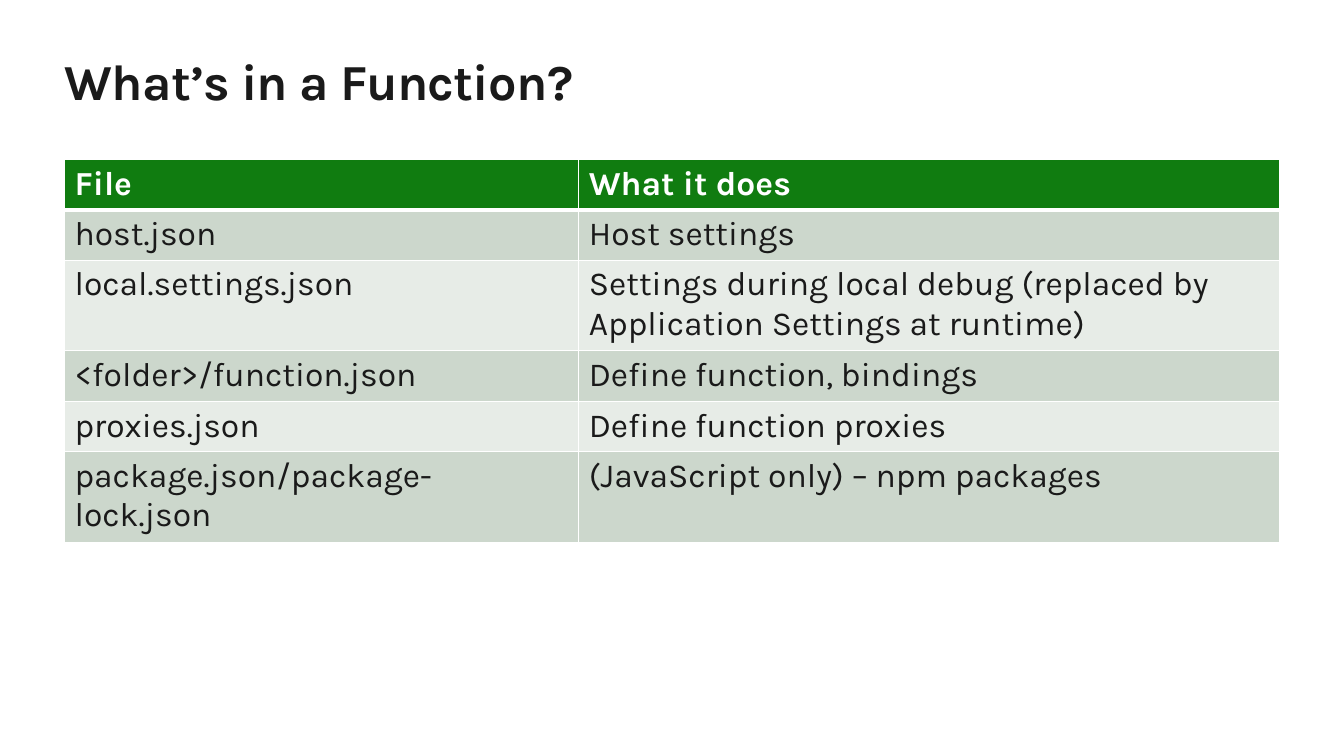
import pptx
import pptx.dml.color
import pptx.enum.text
import pptx.util
from lxml import etree
from pptx.oxml import ns

RGBColor = pptx.dml.color.RGBColor
Inches = pptx.util.Inches
Pt = pptx.util.Pt

INK = RGBColor(0x1A, 0x1A, 0x1A)
WHITE = RGBColor(0xFF, 0xFF, 0xFF)
GREEN = RGBColor(0x10, 0x7C, 0x10)
BANDS = (RGBColor(0xCC, 0xD7, 0xCC), RGBColor(0xE7, 0xEC, 0xE7))

LEFT = 0.64
COLUMN_WIDTHS = (5.1, 6.95)
ROW_HEIGHT = 0.41

FILES = [
    ("File", "What it does"),
    ("host.json", "Host settings"),
    ("local.settings.json",
     "Settings during local debug (replaced by Application Settings at runtime)"),
    ("<folder>/function.json", "Define function, bindings"),
    ("proxies.json", "Define function proxies"),
    ("package.json/package-lock.json", "(JavaScript only) – npm packages"),
]


class FunctionSlide:
    font_name = "Karla"

    def __init__(self, presentation):
        self.slide = presentation.slides.add_slide(presentation.slide_layouts[6])

    def add_text(self, frame, text, size, color, bold):
        run = frame.paragraphs[0].add_run()
        run.text = text
        font_format = {"name": self.font_name, "size": Pt(size), "bold": bold}
        for attribute, value in font_format.items():
            setattr(run.font, attribute, value)
        run.font.color.rgb = color
        return run

    def title(self, text, top, width, height):
        heading = self.slide.shapes.add_textbox(
            Inches(LEFT), Inches(top), Inches(width), Inches(height))
        frame_format = {
            "margin_left": 0, "margin_top": 0, "margin_right": 0, "margin_bottom": 0,
            "word_wrap": True,
            "auto_size": pptx.enum.text.MSO_AUTO_SIZE.SHAPE_TO_FIT_TEXT,
        }
        for attribute, value in frame_format.items():
            setattr(heading.text_frame, attribute, value)
        run = self.add_text(heading.text_frame, text, 36, INK, True)
        run._r.get_or_add_rPr().set("spc", "-50")

    def cell_borders(self, cell, bottom_width, top_width):
        properties = cell._tc.get_or_add_tcPr()
        widths = {"lnL": 1, "lnR": 1, "lnT": top_width, "lnB": bottom_width}
        for side, width in widths.items():
            line = etree.SubElement(properties, ns.qn(f"a:{side}"), w=str(Pt(width)))
            fill = etree.SubElement(line, ns.qn("a:solidFill"))
            etree.SubElement(fill, ns.qn("a:srgbClr"), val=str(WHITE))

    def table(self, rows, top):
        """Add a table with a green header row and alternating bands below it."""
        table = self.slide.shapes.add_table(
            len(rows), len(COLUMN_WIDTHS), Inches(LEFT), Inches(top),
            Inches(sum(COLUMN_WIDTHS)), Inches(ROW_HEIGHT * len(rows))).table
        for column, width in zip(table.columns, COLUMN_WIDTHS):
            column.width = Inches(width)
        for row_index, texts in enumerate(rows):
            is_header = row_index == 0
            table.rows[row_index].height = Inches(ROW_HEIGHT)
            for column_index, text in enumerate(texts):
                cell = table.cell(row_index, column_index)
                self.cell_borders(cell, bottom_width=3 if is_header else 1,
                                  top_width=3 if row_index == 1 else 1)
                cell.fill.solid()
                cell.fill.fore_color.rgb = GREEN if is_header else BANDS[(row_index - 1) % 2]
                self.add_text(cell.text_frame, text, 24, WHITE if is_header else INK, is_header)


def main():
    presentation = pptx.Presentation()
    presentation.slide_width = Inches(13.33)
    presentation.slide_height = Inches(7.5)
    function_slide = FunctionSlide(presentation)
    function_slide.title("What’s in a Function?", 0.5, sum(COLUMN_WIDTHS), 0.61)
    function_slide.table(FILES, 1.58)
    presentation.save("out.pptx")


if __name__ == "__main__":
    main()
